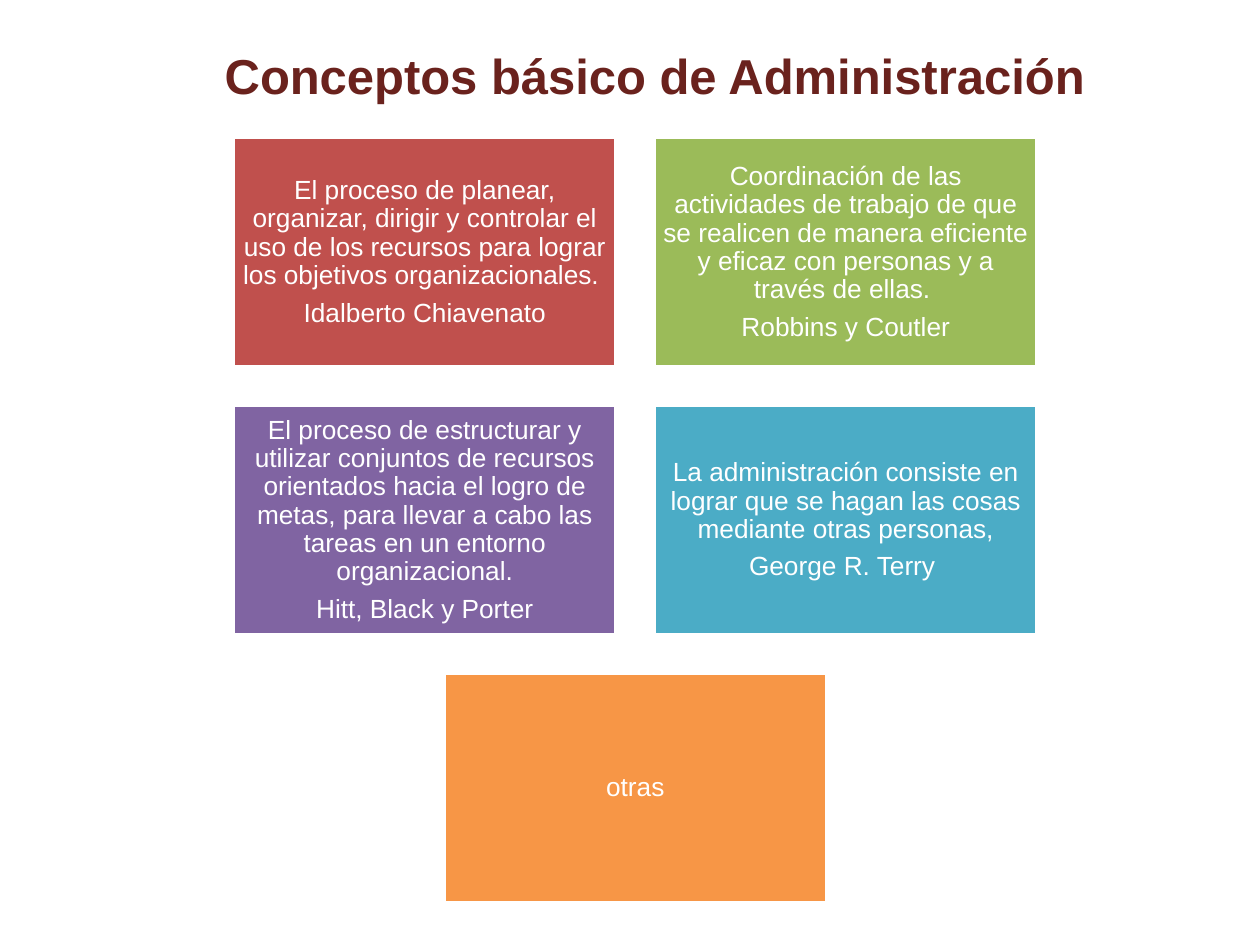
from pptx import Presentation
from pptx.dml.color import RGBColor
from pptx.enum import shapes, text
from pptx.util import Pt

FONT = "Arial"
WHITE = RGBColor(0xFF, 0xFF, 0xFF)
MAROON = RGBColor(0x6A, 0x22, 0x1D)
RED = RGBColor(0xC0, 0x50, 0x4D)
GREEN = RGBColor(0x9B, 0xBB, 0x59)
PURPLE = RGBColor(0x80, 0x64, 0xA2)
BLUE = RGBColor(0x4B, 0xAC, 0xC6)
ORANGE = RGBColor(0xF7, 0x96, 0x46)

COLUMNS = 2
CARD_WIDTH, CARD_HEIGHT, GAP = 218.8, 131.3, 21.8

CONCEPTS = [
    (RED, ["El proceso de planear, organizar, dirigir y controlar el uso de los "
           "recursos para lograr los objetivos organizacionales. ",
           "Idalberto Chiavenato"]),
    (GREEN, ["Coordinación de las actividades de trabajo de que se realicen de "
             "manera eficiente y eficaz con personas y a través de ellas. ",
             "Robbins y Coutler"]),
    (PURPLE, ["El proceso de estructurar y utilizar conjuntos de recursos "
              "orientados hacia el logro de metas, para llevar a cabo las tareas "
              "en un entorno organizacional.",
              "Hitt, Black y Porter"]),
    (BLUE, ["La administración consiste en lograr que se hagan las cosas "
            "mediante otras personas,",
            "George R. Terry "]),
    (ORANGE, ["otras"]),
]


def write_text(frame, paragraphs, *, size, color, bold=False, margin=None,
               line_spacing=None, space_after=None):
    frame.word_wrap = True
    frame.auto_size = text.MSO_AUTO_SIZE.NONE
    frame.vertical_anchor = text.MSO_ANCHOR.MIDDLE
    if margin is not None:
        frame.margin_left = frame.margin_right = Pt(margin)
        frame.margin_top = frame.margin_bottom = Pt(margin)
    for index, wording in enumerate(paragraphs):
        paragraph = frame.add_paragraph() if index else frame.paragraphs[0]
        paragraph.alignment = text.PP_ALIGN.CENTER
        paragraph.line_spacing = line_spacing
        if space_after is not None:
            paragraph.space_after = Pt(space_after)
        run = paragraph.add_run()
        run.text = wording
        run.font.name = FONT
        run.font.size = Pt(size)
        run.font.bold = bold
        run.font.color.rgb = color


def place_title(slide, left, top, width, height):
    title = slide.shapes.title
    title.left, title.top = Pt(left), Pt(top)
    title.width, title.height = Pt(width), Pt(height)
    write_text(title.text_frame, ["Conceptos básico de Administración "],
               size=28, color=MAROON, bold=True)


def add_card(slide, left, top, fill, paragraphs):
    card = slide.shapes.add_shape(shapes.MSO_SHAPE.RECTANGLE, Pt(left), Pt(top),
                                  Pt(CARD_WIDTH), Pt(CARD_HEIGHT))
    card.shadow.inherit = False
    card.fill.solid()
    card.fill.fore_color.rgb = fill
    card.line.color.rgb = WHITE
    card.line.width = Pt(2)
    write_text(card.text_frame, paragraphs, size=15, color=WHITE, margin=4.5,
               line_spacing=0.9, space_after=5.25)


def add_card_grid(slide, left, top):
    """Fill rows of cards from the left; an incomplete last row is centred."""
    step = CARD_WIDTH + GAP
    for row, start in enumerate(range(0, len(CONCEPTS), COLUMNS)):
        cards = CONCEPTS[start:start + COLUMNS]
        indent = (COLUMNS - len(cards)) * step / 2
        for column, (fill, paragraphs) in enumerate(cards):
            add_card(slide, left + indent + column * step,
                     top + row * (CARD_HEIGHT + GAP), fill, paragraphs)


def main():
    presentation = Presentation()
    presentation.slide_width, presentation.slide_height = Pt(720), Pt(540)
    slide = presentation.slides.add_slide(presentation.slide_layouts[5])
    place_title(slide, 36, -12.2, 684, 110)
    add_card_grid(slide, 133.3, 78.6)
    presentation.save("out.pptx")


if __name__ == "__main__":
    main()
